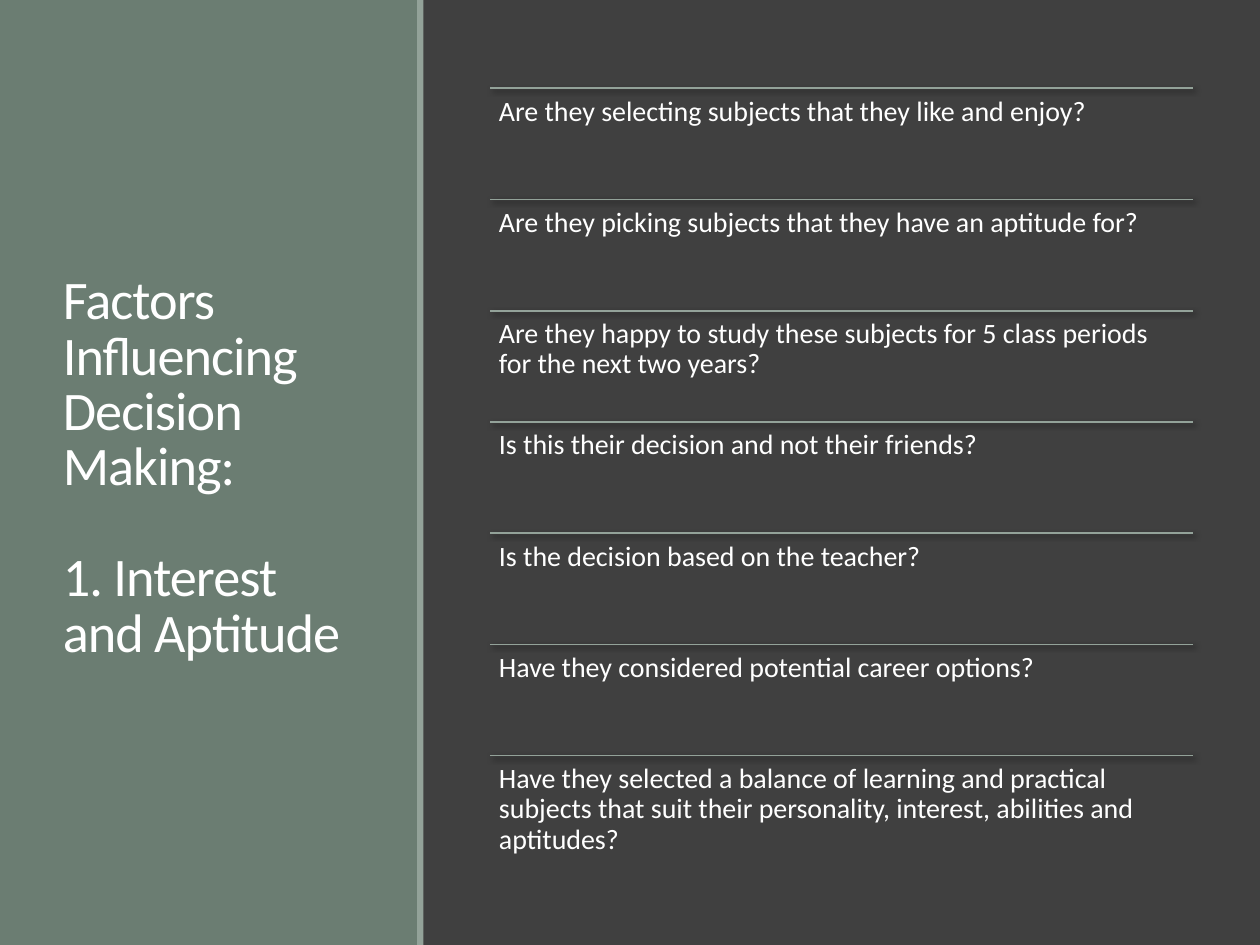
from lxml import etree
from pptx import Presentation
from pptx import util as u
from pptx.dml.color import RGBColor
from pptx.enum import shapes, text
from pptx.oxml import parse_xml
from pptx.oxml.ns import nsdecls

COLORS = {
    "dark": "404040",
    "green": "6B7D72",
    "sage": "93A299",
    "white": "FFFFFF",
    "shadow": "000000",
}
FONT = "Calibri"
TITLE = ["Factors Influencing Decision Making:", "1. Interest and Aptitude"]
QUESTIONS = [
    "Are they selecting subjects that they like and enjoy?",
    "Are they picking subjects that they have an aptitude for?",
    "Are they happy to study these subjects for 5 class periods for the next two years?",
    "Is this their decision and not their friends?",
    "Is the decision based on the teacher?",
    "Have they considered potential career options?",
    "Have they selected a balance of learning and practical subjects that suit "
    "their personality, interest, abilities and aptitudes?",
]


def color(name):
    return RGBColor.from_string(COLORS[name])


def add_panel(slide, left, top, width, height, fill):
    panel = slide.shapes.add_shape(
        shapes.MSO_SHAPE.RECTANGLE,
        u.Inches(left), u.Inches(top), u.Inches(width), u.Inches(height))
    panel.shadow.inherit = False
    panel.fill.solid()
    panel.fill.fore_color.rgb = color(fill)
    panel.line.fill.background()


def add_text(slide, left, top, width, height, lines, size, spacing):
    box = slide.shapes.add_textbox(
        u.Inches(left), u.Inches(top), u.Inches(width), u.Inches(height))
    frame = box.text_frame
    frame.word_wrap = True
    frame.text = "\n".join(lines)
    for paragraph in frame.paragraphs:
        paragraph.line_spacing = spacing
        paragraph.font.size = u.Pt(size)
        paragraph.font.name = FONT
        paragraph.font.color.rgb = color("white")
    return frame


def add_divider(slide, left, top, width):
    line = slide.shapes.add_connector(
        shapes.MSO_CONNECTOR.STRAIGHT,
        u.Inches(left), u.Inches(top), u.Inches(left + width), u.Inches(top))
    line.line.color.rgb = color("sage")
    line.line.width = u.Pt(1)
    # Soft shadow: 3 pt blur, 2 pt away, at 45 degrees
    line._element.spPr.append(parse_xml(
        f'<a:effectLst {nsdecls("a")}>'
        f'<a:outerShdw blurRad="{u.Pt(3)}" dist="{u.Pt(2)}" dir="2700000" rotWithShape="0">'
        f'<a:srgbClr val="{COLORS["shadow"]}"><a:alpha val="60000"/></a:srgbClr>'
        '</a:outerShdw></a:effectLst>'))


def add_title_panel(slide, left, top, width, height):
    add_panel(slide, left, top, width, height, "green")
    add_panel(slide, left + width - 0.01, top, 0.05, height, "sage")
    frame = add_text(slide, left + 0.4, top + 0.57, 2.53, 6.31, TITLE, 31, 0.85)
    frame.vertical_anchor = text.MSO_ANCHOR.MIDDLE
    # One line of space between the heading and the topic
    frame.paragraphs[1].space_before = u.Pt(31.7)
    for paragraph in frame.paragraphs:
        for run in paragraph.runs:
            run.font._element.set("spc", "-50")


def add_question_list(slide, left, top, width, height):
    row_height = height / len(QUESTIONS)
    for index, question in enumerate(QUESTIONS):
        row_top = top + index * row_height
        add_divider(slide, left, row_top, width)
        frame = add_text(slide, left, row_top, width, row_height, [question], 16, 0.9)
        frame.margin_left = frame.margin_right = u.Inches(0.07)
        frame.margin_top = frame.margin_bottom = u.Inches(0.07)


def main():
    presentation = Presentation()
    presentation.slide_width = u.Inches(10)
    presentation.slide_height = u.Inches(7.5)
    slide = presentation.slides.add_slide(presentation.slide_layouts[6])

    # Backdrop
    slide.background.fill.solid()
    slide.background.fill.fore_color.rgb = color("dark")
    add_panel(slide, 0, 0, 10, 7.5, "dark")

    # Title on the left, questions on the right
    add_title_panel(slide, 0, 0, 3.32, 7.5)
    add_question_list(slide, 3.89, 0.7, 5.58, 6.18)

    presentation.save("out.pptx")


if __name__ == "__main__":
    main()
